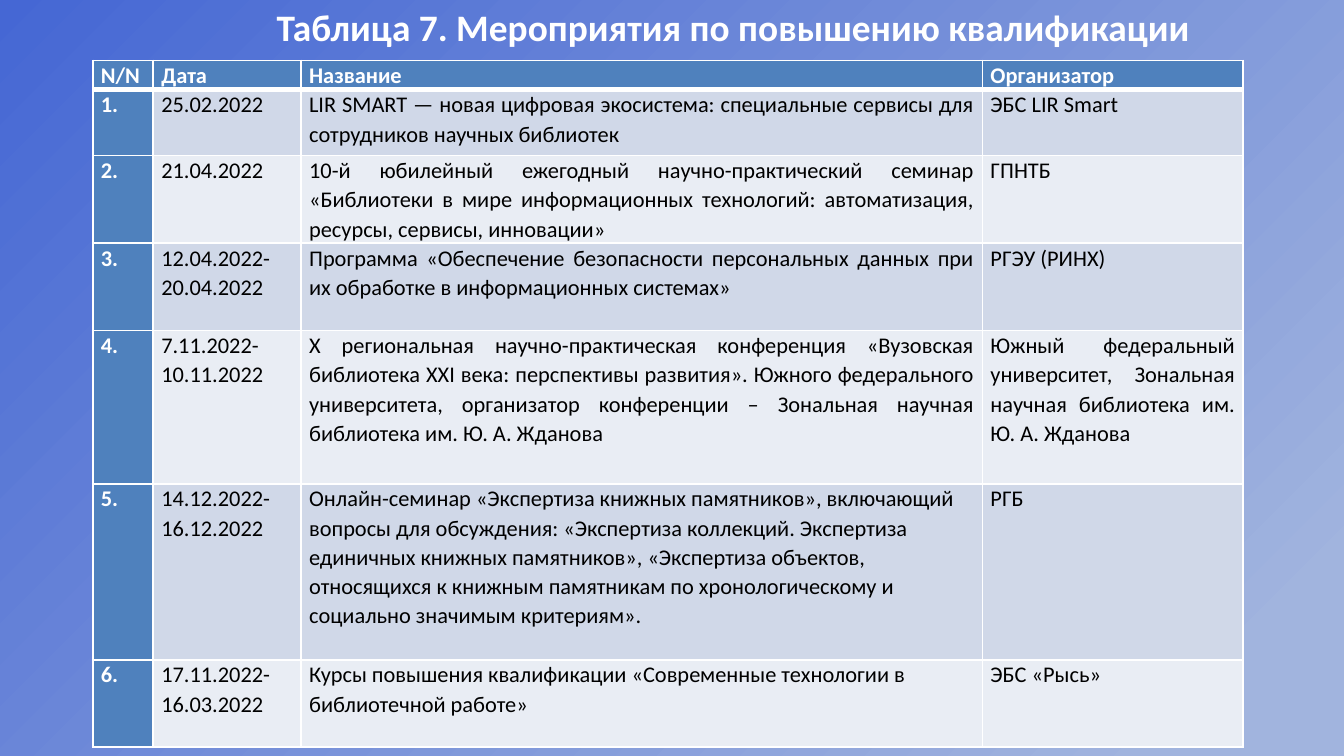
from dataclasses import dataclass

from lxml.etree import SubElement
from pptx import Presentation
from pptx.dml.color import RGBColor
from pptx.enum.text import MSO_ANCHOR, MSO_AUTO_SIZE, PP_ALIGN
from pptx.oxml.ns import qn
from pptx.util import Inches, Pt


@dataclass(frozen=True)
class Theme:
    font: str = "Calibri"
    title_size: int = 20
    table_size: int = 12
    line_spacing: float = 1.07
    white: str = "FFFFFF"
    black: str = "000000"
    accent: str = "4F81BD"
    bands: tuple = ("D0D8E8", "E9EDF4")
    gradient: tuple = ((0, "4567D4"), (0.91, "A1B4DE"))


THEME = Theme()

TITLE = "Таблица 7. Мероприятия по повышению квалификации"
COLUMN_WIDTHS = (0.45, 1.1, 5.07, 1.94)
ROW_HEIGHTS = (0.16, 0.49, 0.65, 0.65, 1.14, 1.31, 0.65)
NAME_COLUMN = 2
LEFT_ALIGNED_ROWS = (5, 6)
HEADER = ("N/N", "Дата", "Название", "Организатор")
EVENTS = (
    ("25.02.2022",
     "LIR SMART — новая цифровая экосистема: специальные сервисы для "
     "сотрудников научных библиотек",
     "ЭБС LIR Smart"),
    ("21.04.2022",
     "10-й юбилейный ежегодный научно-практический семинар «Библиотеки в мире "
     "информационных технологий: автоматизация, ресурсы, сервисы, инновации»",
     "ГПНТБ"),
    ("12.04.2022-20.04.2022",
     "Программа «Обеспечение безопасности персональных данных при их обработке "
     "в информационных системах»",
     "РГЭУ (РИНХ)"),
    ("7.11.2022-10.11.2022",
     "X региональная научно-практическая конференция «Вузовская библиотека "
     "XXI века: перспективы развития». Южного федерального университета, "
     "организатор конференции – Зональная научная библиотека им. Ю. А. Жданова",
     "Южный федеральный университет, Зональная научная библиотека "
     "им. Ю. А. Жданова"),
    ("14.12.2022-16.12.2022",
     "Онлайн-семинар «Экспертиза книжных памятников», включающий вопросы для "
     "обсуждения: «Экспертиза коллекций. Экспертиза единичных книжных "
     "памятников», «Экспертиза объектов, относящихся к книжным памятникам по "
     "хронологическому и социально значимым критериям».",
     "РГБ"),
    ("17.11.2022-16.03.2022",
     "Курсы повышения квалификации «Современные технологии в библиотечной работе»",
     "ЭБС «Рысь»"),
)


def style_runs(paragraph, size, color, bold):
    for run in paragraph.runs:
        run.font.name = THEME.font
        run.font.size = Pt(size)
        run.font.bold = bold
        run.font.color.rgb = RGBColor.from_string(color)


def set_borders(cell, top=1, bottom=1):
    """White cell borders; widths are in points."""
    properties = cell._tc.get_or_add_tcPr()
    widths = (("a:lnL", 1), ("a:lnR", 1), ("a:lnT", top), ("a:lnB", bottom))
    for position, (tag, width) in enumerate(widths):
        line = SubElement(properties, qn(tag), w=str(Pt(width)))
        fill = SubElement(line, qn("a:solidFill"))
        SubElement(fill, qn("a:srgbClr"), val=THEME.white)
        properties.insert(position, line)


# Diagonal gradient from the top left corner
def fill_background(slide):
    fill = slide.background.fill
    fill.gradient()
    fill.gradient_angle = 315
    for stop, (position, color) in zip(fill.gradient_stops, THEME.gradient):
        stop.position = position
        stop.color.rgb = RGBColor.from_string(color)


# Heading above the table
def add_title(slide, left, top, width, height):
    box = slide.shapes.add_textbox(
        Inches(left), Inches(top), Inches(width), Inches(height))
    frame = box.text_frame
    frame.text = TITLE
    frame.word_wrap = False
    frame.auto_size = MSO_AUTO_SIZE.SHAPE_TO_FIT_TEXT
    frame.vertical_anchor = MSO_ANCHOR.MIDDLE
    paragraph = frame.paragraphs[0]
    paragraph._p.get_or_add_pPr().set("indent", str(Inches(0.49)))
    style_runs(paragraph, THEME.title_size, THEME.white, True)


def format_cell(cell, text, row, column):
    is_heading = row == 0 or column == 0
    color = THEME.accent if is_heading else THEME.bands[(row - 1) % 2]
    cell.fill.solid()
    cell.fill.fore_color.rgb = RGBColor.from_string(color)
    set_borders(cell, top=3 if row == 1 else 1, bottom=3 if row == 0 else 1)

    cell.margin_left = cell.margin_right = Inches(0.06)
    cell.margin_top = cell.margin_bottom = 0
    cell.text_frame.text = text
    paragraph = cell.text_frame.paragraphs[0]
    paragraph.line_spacing = THEME.line_spacing
    is_left = column == NAME_COLUMN and row in LEFT_ALIGNED_ROWS
    paragraph.alignment = PP_ALIGN.LEFT if is_left else PP_ALIGN.JUSTIFY
    text_color = THEME.white if is_heading else THEME.black
    style_runs(paragraph, THEME.table_size, text_color, is_heading)


# Numbered events with banded rows
def add_events_table(slide, left, top, width, height):
    rows = [HEADER] + [
        (f"{number}.", *event) for number, event in enumerate(EVENTS, 1)]
    frame = slide.shapes.add_table(
        len(rows), len(HEADER), Inches(left), Inches(top),
        Inches(width), Inches(height))
    table = frame.table
    table.first_col = True
    for column, column_width in zip(table.columns, COLUMN_WIDTHS):
        column.width = Inches(column_width)
    for row, row_height in zip(table.rows, ROW_HEIGHTS):
        row.height = Inches(row_height)
    frame.height = Inches(height)
    for row, texts in enumerate(rows):
        for column, text in enumerate(texts):
            format_cell(table.cell(row, column), text, row, column)


def main():
    presentation = Presentation()
    presentation.slide_width = Inches(10)
    presentation.slide_height = presentation.slide_width * 9 // 16
    slide = presentation.slides.add_slide(presentation.slide_layouts[6])

    fill_background(slide)
    add_events_table(slide, 0.69, 0.45, 8.56, 5.1)
    add_title(slide, 1.47, -0.02, 7.55, 0.44)

    presentation.save("out.pptx")


if __name__ == "__main__":
    main()
